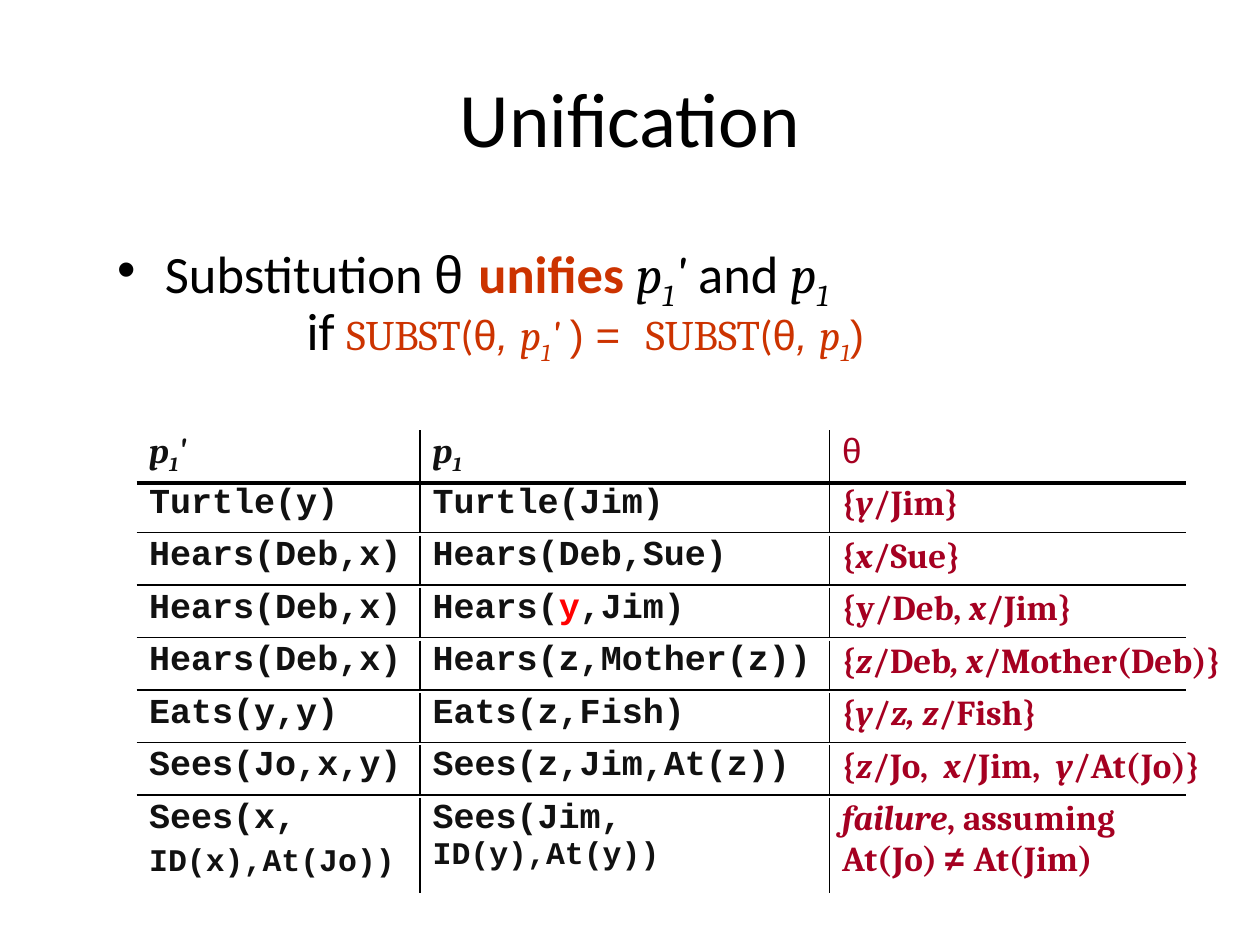
from lxml.etree import SubElement
from pptx import Presentation
from pptx.dml.color import RGBColor
from pptx.enum.text import MSO_ANCHOR, MSO_AUTO_SIZE, PP_ALIGN
from pptx.oxml.ns import qn
from pptx.util import Pt

MIDDLE, CENTER, NO_FIT = MSO_ANCHOR.MIDDLE, PP_ALIGN.CENTER, MSO_AUTO_SIZE.NONE
PX = 7620  # 120 px to the inch
NO_STYLE = "{2D5ABB26-0587-4C30-8999-92F81FD0307C}"

# Base style of each kind of text, and the marks that change it run by run.
TITLE = {"font": "Calibri", "size": 44, "color": "000000"}
BODY = {"font": "Calibri", "size": 30, "color": "000000"}
RULE = {"font": "Cambria", "size": 24, "color": "CC3300"}
TERM = {"font": "Courier New", "size": 20, "color": "111111", "bold": True}
THETA = {"font": "Cambria", "size": 20, "color": "A50021", "bold": True}
MARKS = {
    "a": {"font": "Arial"},
    "c": {"font": "Calibri"},
    "m": {"font": "Cambria"},
    "n": {"font": "Courier New"},
    "i": {"italic": True},
    "s": {"base": "-25000"},
    "b": {"bold": True},
    "p": {"bold": False},
    "o": {"color": "CC3300"},
    "r": {"color": "FF0000"},
    "t": {"color": "A50021"},
    "8": {"size": 18},
}

# A run is (text, marks); a paragraph is a list of runs.
INTRO = [("Substitution ", ""), ("θ ", "a"), ("unifies ", "ob"), ("p", "mi"),
         ("1", "mis"), ("' ", "mi"), ("and ", ""), ("p", "mi"), ("1", "mis"),
         ("\n", ""), ("\t\t\t", "mis"), ("if ", "")]
CONDITION = [("SUBST", ""), ("(", "c"), ("θ", "a"), (", ", "ai"), ("p", "i"),
             ("1", "is"), ("' ", "i"), (") ", "a"), ("= ", "n"), ("SUBST", ""),
             ("(", "c"), ("θ", "a"), (", ", "ai"), ("p", "i"), ("1", "is"), (")", "a")]

HEADER = [[[("p", "mi"), ("1", "mis"), ("'", "mi")]],
          [[("p", "mi"), ("1", "mis")]],
          [[("θ", "atp")]]]


def plain(text):
    return [[(text, "")]]


# Two terms, the unifier, and the width of the unifier's box.
ROWS = [
    (plain("Turtle(y)"), plain("Turtle(Jim)"),
     [("{", ""), ("y", "i"), ("/Jim}", "")], 343),
    (plain("Hears(Deb,x)"), plain("Hears(Deb,Sue)"),
     [("{", ""), ("x", "i"), ("/Sue}", "")], 343),
    (plain("Hears(Deb,x)"), [[("Hears(", ""), ("y", "r"), (",Jim)", "")]],
     [("{y/Deb,", ""), (" x", "i"), ("/Jim}", "")], 340),
    (plain("Hears(Deb,x)"), plain("Hears(z,Mother(z))"),
     [("{", ""), ("z", "i"), ("/Deb", ""), (", x", "i"), ("/Mother(Deb)}", "")], 410),
    (plain("Eats(y,y)"), plain("Eats(z,Fish)"),
     [("{", ""), ("y", "i"), ("/", ""), ("z, z", "i"), ("/Fish}", "")], 390),
    (plain("Sees(Jo,x,y)"), plain("Sees(z,Jim,At(z))"),
     [("{", ""), ("z", "i"), ("/Jo,  ", ""), ("x", "i"), ("/Jim,", ""),
      ("  y", "i"), ("/At(Jo)}", "")], 410),
    ([[("Sees(x,", "")], [("ID(x),At(Jo))", "8")]],
     [[("Sees(Jim,", ""), ("\n", ""), ("ID(y),At(y))", "8")]],
     [("failure", "i"), (", assuming At(Jo) ", ""), ("≠ ", "a"), ("At(Jim)", "")], 340),
]

LEFT, TOP, PITCH, HIGH, TALL = 130, 410, 50, 47, 90
COLS = [270, 390, 340]
THIN, THICK = 1, 2.25


def rgb(code):
    return RGBColor.from_string(code)


def place(shape, *box):
    shape.left, shape.top, shape.width, shape.height = [n * PX for n in box]


def write(para, runs, style):
    for text, marks in runs:
        if text == "\n":
            para.add_line_break()
            continue
        look = dict(style)
        for mark in marks:
            look.update(MARKS[mark])
        run = para.add_run()
        run.text = text
        font = run.font
        font.name, font.size = look["font"], Pt(look["size"])
        font.color.rgb = rgb(look["color"])
        font.bold = look.get("bold", False)
        font.italic = look.get("italic", False)
        if "base" in look:
            font._element.set("baseline", look["base"])


def fill_cell(cell, paras, style):
    cell.margin_left = cell.margin_right = 12 * PX
    cell.margin_top, cell.margin_bottom = PX, 6 * PX
    frame = cell.text_frame
    for i, runs in enumerate(paras):
        para = frame.add_paragraph() if i else frame.paragraphs[0]
        para.space_before = Pt(4)
        write(para, runs, style)


def border(cell, edges):
    """Draw the edges, a dict of side (L, R, T, B) to width in points."""
    props = cell._tc.get_or_add_tcPr()
    for side in "LRTB":
        if side in edges:
            line = SubElement(props, qn("a:ln" + side), w=str(Pt(edges[side])))
            paint = SubElement(line, qn("a:solidFill"))
            SubElement(paint, qn("a:srgbClr"), val="000000")
    cell.fill.background()


def add_row(slide, left, top, widths, high):
    """Add a table of one row and return its cells."""
    box = [n * PX for n in (left, top, sum(widths), high)]
    table = slide.shapes.add_table(1, len(widths), *box).table
    table.first_row = table.horz_banding = False
    table._tbl.tblPr[0].text = NO_STYLE
    for col, wide in zip(table.columns, widths):
        col.width = wide * PX
    return list(table.rows[0].cells)


def add_grid(slide, top, high, texts, edges):
    cells = add_row(slide, LEFT, top, COLS, high)
    for i, cell in enumerate(cells):
        sides = dict(edges)
        if i > 0:
            sides["L"] = THIN
        if i < len(cells) - 1:
            sides["R"] = THIN
        border(cell, sides)
        fill_cell(cell, texts[i], TERM)


def main():
    deck = Presentation()
    deck.slide_width, deck.slide_height = 1200 * PX, 900 * PX
    slide = deck.slides.add_slide(deck.slide_layouts[1])

    title, body = slide.placeholders
    place(title, 60, 36, 1080, 150)
    title.text_frame.vertical_anchor = MIDDLE
    head = title.text_frame.paragraphs[0]
    head.alignment = CENTER
    write(head, [("Unification", "")], TITLE)

    place(body, 100, 230, 1060, 110)
    body.text_frame.auto_size = NO_FIT
    para = body.text_frame.paragraphs[0]
    para.line_spacing = 0.8
    write(para, INTRO, BODY)
    write(para, CONDITION, RULE)

    add_grid(slide, TOP, HIGH, HEADER, {})
    for i, (first, second, theta, wide) in enumerate(ROWS, 1):
        top, last = TOP + i * PITCH, i == len(ROWS)
        high = TALL if last else HIGH
        edges = {} if last else {"B": THIN}
        if i == 1:
            edges["T"] = THICK
        add_grid(slide, top, high, [first, second, []], edges)
        cell = add_row(slide, LEFT + sum(COLS[:2]), top, [wide], high)[0]
        border(cell, {})
        fill_cell(cell, [theta], THETA)

    deck.save("out.pptx")


if __name__ == "__main__":
    main()
